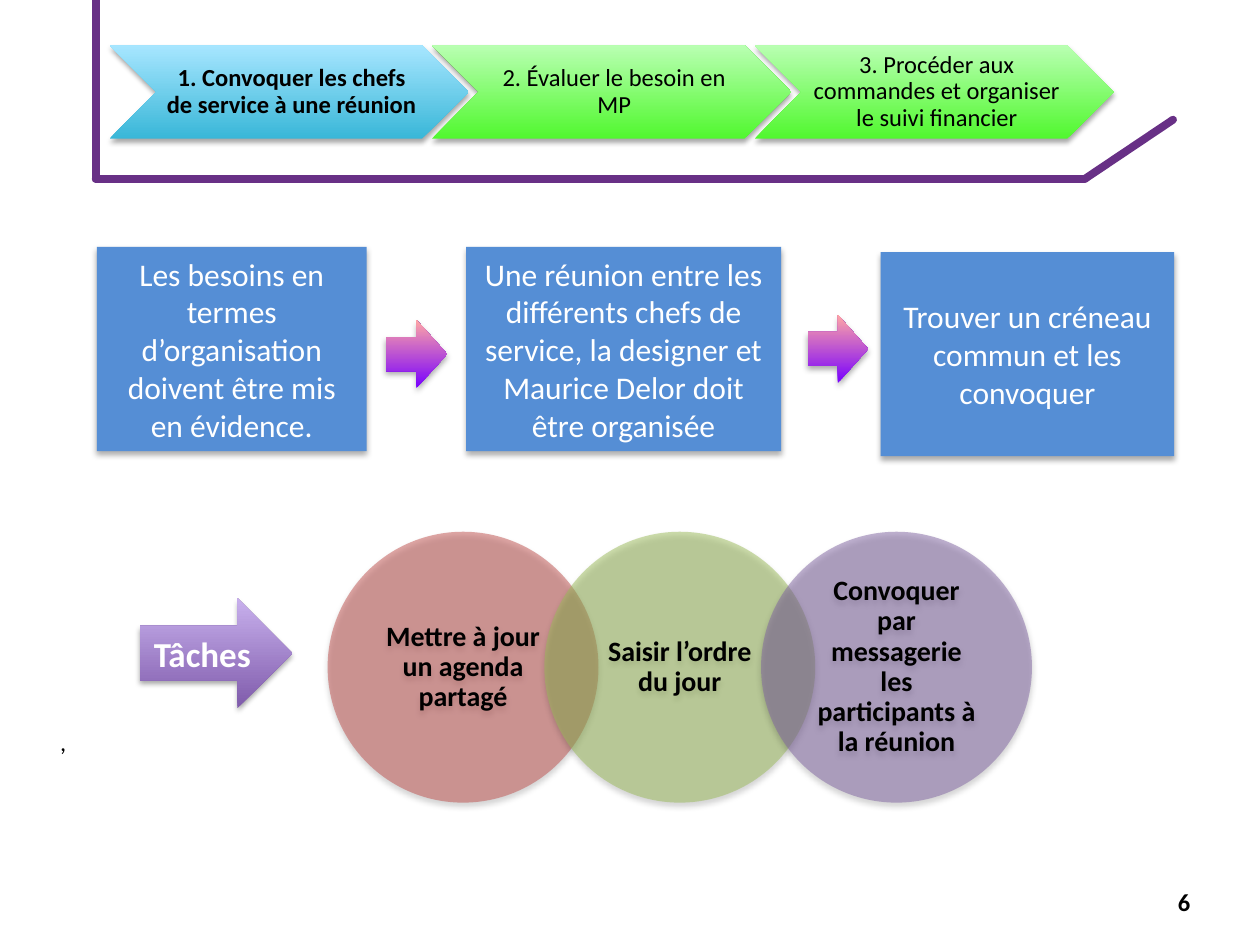
from dataclasses import dataclass
from typing import Optional

from lxml import etree
from pptx import Presentation
from pptx.dml.color import RGBColor
from pptx.enum.shapes import MSO_CONNECTOR, MSO_SHAPE
from pptx.enum.text import MSO_ANCHOR, PP_ALIGN
from pptx.oxml.ns import qn
from pptx.util import Inches, Pt

CHEVRON = MSO_SHAPE.CHEVRON
ELLIPSE = MSO_SHAPE.OVAL
RECTANGLE = MSO_SHAPE.RECTANGLE
RIGHT_ARROW = MSO_SHAPE.RIGHT_ARROW
STRAIGHT = MSO_CONNECTOR.STRAIGHT
CENTER = PP_ALIGN.CENTER
LEFT = PP_ALIGN.LEFT
MIDDLE = MSO_ANCHOR.MIDDLE
TOP = MSO_ANCHOR.TOP

FONT = "Calibri"
BLACK = RGBColor(0x00, 0x00, 0x00)
WHITE = RGBColor(0xFF, 0xFF, 0xFF)
FRAME_PURPLE = RGBColor(0x68, 0x30, 0x86)
BOX_BLUE = RGBColor(0x55, 0x8E, 0xD5)
RED = RGBColor(0xC0, 0x50, 0x4D)
GREEN = RGBColor(0x9B, 0xBB, 0x59)
PURPLE = RGBColor(0x80, 0x64, 0xA2)
# Gradients run from bottom to top
CYAN_FADE = (RGBColor(0x39, 0xB7, 0xD8), RGBColor(0xA7, 0xE6, 0xFF))
GREEN_FADE = (RGBColor(0x51, 0xF8, 0x2F), RGBColor(0xB9, 0xFF, 0xB2))
PINK_FADE = (RGBColor(0x78, 0x00, 0xFF), RGBColor(0xFF, 0xA6, 0xA5))
PURPLE_FADE = (RGBColor(0x7F, 0x5B, 0xAB), RGBColor(0xC8, 0xB0, 0xED))


@dataclass(frozen=True)
class Shadow:
    opacity: int
    blur: float
    distance: float


@dataclass(frozen=True)
class TextStyle:
    size: int
    color: RGBColor
    bold: bool = False
    align: PP_ALIGN = CENTER
    anchor: MSO_ANCHOR = MIDDLE
    insets: tuple = (0.1, 0.05, 0.1, 0.05)
    line_spacing: Optional[float] = None


@dataclass(frozen=True)
class Block:
    preset: MSO_SHAPE
    box: tuple
    fill: object  # one colour, or a (bottom, top) pair
    shadow: Shadow
    text: str = ""
    style: Optional[TextStyle] = None
    opacity: int = 100


SOFT = Shadow(32, 3.5, 2.2)
STRONG = Shadow(35, 3.1, 1.8)
STEP_INSETS = (0.06, 0.02, 0.02, 0.02)
CURRENT_STEP = TextStyle(14, BLACK, True, insets=STEP_INSETS, line_spacing=0.9)
OTHER_STEP = TextStyle(14, BLACK, insets=STEP_INSETS, line_spacing=0.9)
NEED_STYLE = TextStyle(18, WHITE)
TASK_STYLE = TextStyle(16, BLACK, True, insets=(0.12, 0.02, 0.12, 0.02), line_spacing=0.9)
LABEL_STYLE = TextStyle(20, WHITE, True)

FRAME = [(0.76, 0), (0.76, 1.42), (8.61, 1.42), (9.31, 0.95)]
STEPS = [
    ("1. Convoquer les chefs de service à une réunion", CYAN_FADE, CURRENT_STEP),
    ("2. Évaluer le besoin en MP", GREEN_FADE, OTHER_STEP),
    ("3. Procéder aux commandes et organiser le suivi financier", GREEN_FADE, OTHER_STEP),
]
NEEDS = [
    ((0.77, 1.96, 2.14, 1.62),
     "Les besoins en termes d’organisation doivent être mis en évidence."),
    ((3.7, 1.96, 2.5, 1.62),
     "Une réunion entre les différents chefs de service, la designer et "
     "Maurice Delor doit être organisée"),
    ((6.99, 2, 2.33, 1.62), "Trouver un créneau commun et les convoquer"),
]
NEED_ARROWS = [(3.06, 2.54, 0.49, 0.54), (6.41, 2.5, 0.48, 0.54)]
TASKS = [
    ("Mettre à jour un agenda partagé", RED),
    ("Saisir l’ordre du jour", GREEN),
    ("Convoquer par messagerie les participants à la réunion", PURPLE),
]


def write_text(shape, text: str, style: TextStyle) -> None:
    frame = shape.text_frame
    frame.word_wrap = True
    frame.vertical_anchor = style.anchor
    (frame.margin_left, frame.margin_top,
     frame.margin_right, frame.margin_bottom) = map(Inches, style.insets)
    paragraph = frame.paragraphs[0]
    paragraph.text = text
    paragraph.alignment = style.align
    if style.line_spacing:
        paragraph.line_spacing = style.line_spacing
    paragraph.font.name = FONT
    paragraph.font.size = Pt(style.size)
    paragraph.font.bold = style.bold
    paragraph.font.color.rgb = style.color


def set_opacity(color_element, percent: int) -> None:
    etree.SubElement(color_element, qn("a:alpha"), val=str(percent * 1000))


def cast_shadow(shape, shadow: Shadow) -> None:
    shape.shadow.inherit = False
    effects = shape._element.spPr.find(qn("a:effectLst"))
    outer = etree.SubElement(
        effects, qn("a:outerShdw"), blurRad=str(Pt(shadow.blur)),
        dist=str(Pt(shadow.distance)), dir="5400000", rotWithShape="0")
    set_opacity(etree.SubElement(outer, qn("a:srgbClr"), val="000000"), shadow.opacity)


def draw_block(slide, block: Block) -> None:
    shape = slide.shapes.add_shape(block.preset, *map(Inches, block.box))
    shape.line.fill.background()
    if isinstance(block.fill, RGBColor):
        shape.fill.solid()
        shape.fill.fore_color.rgb = block.fill
        if block.opacity < 100:
            color = shape._element.spPr.find(qn("a:solidFill")).find(qn("a:srgbClr"))
            set_opacity(color, block.opacity)
    else:
        shape.fill.gradient()
        shape.fill.gradient_angle = 90
        for stop, color in zip(shape.fill.gradient_stops, block.fill):
            stop.color.rgb = color
    cast_shadow(shape, block.shadow)
    if block.text:
        write_text(shape, block.text, block.style)


def draw_frame_line(slide, start: tuple, end: tuple) -> None:
    line = slide.shapes.add_connector(STRAIGHT, *map(Inches, start + end))
    line.line.color.rgb = FRAME_PURPLE
    line.line.width = Pt(4.5)
    properties = line._element.spPr
    properties.find(qn("a:ln")).set("cap", "rnd")
    etree.SubElement(properties, qn("a:effectLst"))


def draw_note(slide, box: tuple, text: str, bold: bool) -> None:
    note = slide.shapes.add_textbox(*map(Inches, box))
    write_text(note, text, TextStyle(14, BLACK, bold, LEFT, TOP))


def main() -> None:
    presentation = Presentation()
    presentation.slide_width = Inches(10)
    presentation.slide_height = Inches(7.5)
    slide = presentation.slides.add_slide(presentation.slide_layouts[6])

    # Header frame
    for start, end in zip(FRAME, FRAME[1:]):
        draw_frame_line(slide, start, end)

    # Page number and stray comma
    draw_note(slide, (9.25, 6.99, 0.67, 0.4), "6", True)
    draw_note(slide, (0.38, 5.72, 8.86, 0.34), ",", False)

    # Overlapping tasks
    for i, (text, color) in enumerate(TASKS):
        draw_block(slide, Block(ELLIPSE, (2.6 + 1.72 * i, 4.22, 2.15, 2.15),
                                color, SOFT, text, TASK_STYLE, opacity=50))

    # Process steps
    for i, (text, fade, style) in enumerate(STEPS):
        draw_block(slide, Block(CHEVRON, (0.87 + 2.56 * i, 0.36, 2.85, 0.74),
                                fade, STRONG, text, style))

    # Needs and the arrows between them
    for box, text in NEEDS:
        draw_block(slide, Block(RECTANGLE, box, BOX_BLUE, SOFT, text, NEED_STYLE))
    for box in NEED_ARROWS:
        draw_block(slide, Block(RIGHT_ARROW, box, PINK_FADE, SOFT))

    # Label of the task row
    draw_block(slide, Block(RIGHT_ARROW, (1.11, 4.75, 1.21, 0.87), PURPLE_FADE,
                            STRONG, "Tâches", LABEL_STYLE))

    presentation.save("out.pptx")


if __name__ == "__main__":
    main()
